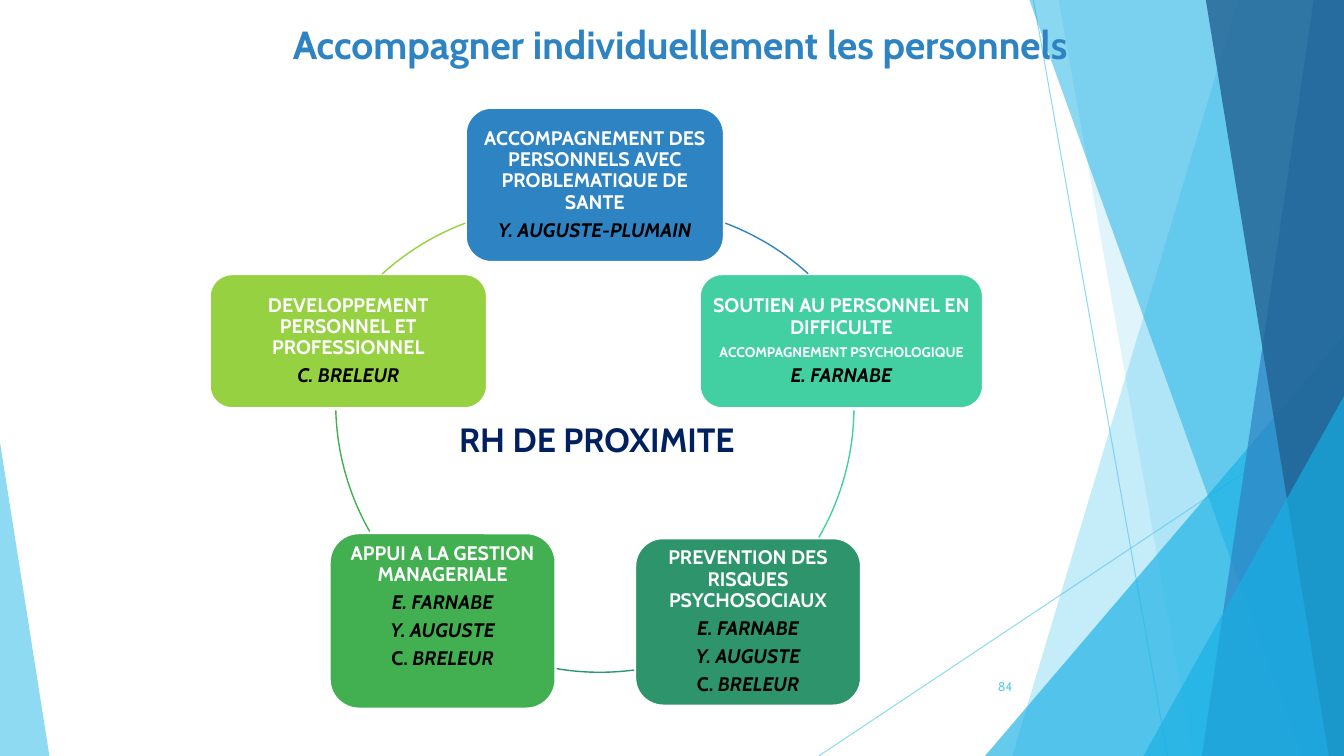
from dataclasses import dataclass

from lxml import etree
from pptx import Presentation
from pptx.dml.color import RGBColor
from pptx.enum.shapes import MSO_CONNECTOR, MSO_SHAPE
from pptx.enum.text import MSO_ANCHOR, PP_ALIGN
from pptx.oxml.ns import qn
from pptx.util import Emu, Pt

TRIANGLE = MSO_SHAPE.ISOSCELES_TRIANGLE
ROUNDED = MSO_SHAPE.ROUNDED_RECTANGLE
ARC = MSO_SHAPE.ARC
STRAIGHT = MSO_CONNECTOR.STRAIGHT
MIDDLE, TOP = MSO_ANCHOR.MIDDLE, MSO_ANCHOR.TOP
CENTER, RIGHT = PP_ALIGN.CENTER, PP_ALIGN.RIGHT

EMU_PER_PX = 9144  # 100 px to the inch
WIDTH, HEIGHT = 1333, 750
RING_SIZE = 514
CARD_INSET = 6


@dataclass(frozen=True)
class Theme:
    font: str = "Cabin"
    sky: str = "5FCBEF"
    cyan: str = "17B0E4"
    blue: str = "2E83C3"
    deep: str = "226292"
    navy: str = "002060"
    mint: str = "42D0A2"
    pine: str = "2E946B"
    green: str = "42B051"
    lime: str = "96D141"
    white: str = "FFFFFF"
    black: str = "000000"
    title: int = 28
    hub: int = 24
    body: int = 14
    note: int = 10
    number: int = 9


THEME = Theme()


@dataclass(frozen=True)
class Box:
    left: int
    top: int
    width: int
    height: int


@dataclass(frozen=True)
class Run:
    text: str
    size: int = THEME.body
    color: str = THEME.white
    bold: bool = True
    italic: bool = False


@dataclass(frozen=True)
class Ray:
    start: tuple[int, int]
    end: tuple[int, int]


@dataclass(frozen=True)
class Facet:
    points: tuple[tuple[int, int], ...]
    color: str
    opacity: int


@dataclass(frozen=True)
class Wedge:
    box: Box
    apex: float
    color: str
    opacity: int


@dataclass(frozen=True)
class Card:
    box: Box
    color: str
    paragraphs: tuple[tuple[Run, ...], ...]
    extra_bottom: int = 0


@dataclass(frozen=True)
class RingArc:
    left: int
    top: int
    start_degrees: float
    end_degrees: float
    color: str


def name(text: str) -> Run:
    return Run(text, color=THEME.black, italic=True)


TEAM = ((name("E. FARNABE"),), (name("Y. AUGUSTE"),),
        (Run("C. ", color=THEME.black), name("BRELEUR")))

RAYS = (Ray((1025, 0), (1158, HEIGHT)), Ray((WIDTH, 403), (812, HEIGHT)))


def facet(top_left: int, bottom_left: int, color: str, opacity: int) -> Facet:
    """Band from a slanted left edge to the right side of the slide."""
    return Facet(((top_left, 0), (WIDTH, 0), (WIDTH, HEIGHT), (bottom_left, HEIGHT)),
                 color, opacity)


BACKDROP = (
    facet(1228, 1004, THEME.sky, 36),
    facet(1050, 1183, THEME.sky, 20),
    Wedge(Box(977, 333, 356, 417), 1, THEME.cyan, 66),
    facet(1021, 1291, THEME.cyan, 50),
    facet(1303, 1192, THEME.blue, 70),
    facet(1196, 1318, THEME.deep, 80),
    Wedge(Box(1134, 393, 199, 357), 1, THEME.cyan, 66),
    Wedge(Box(0, 439, 49, 311), 0, THEME.sky, 70),
)

CARDS = (
    Card(Box(462, 107, 256, 153), THEME.blue, (
        (Run("ACCOMPAGNEMENT DES PERSONNELS AVEC PROBLEMATIQUE DE SANTE"),),
        (name("Y. AUGUSTE-PLUMAIN"),))),
    Card(Box(694, 272, 281, 133), THEME.mint, (
        (Run("SOUTIEN AU PERSONNEL EN DIFFICULTE"),),
        (Run("ACCOMPAGNEMENT PSYCHOLOGIQUE", THEME.note),),
        (name("E. FARNABE"),))),
    Card(Box(630, 534, 224, 166), THEME.pine, (
        (Run("PREVENTION DES RISQUES PSYCHOSOCIAUX"),), *TEAM)),
    Card(Box(327, 529, 224, 174), THEME.green, (
        (Run("APPUI A LA GESTION MANAGERIALE"),), *TEAM), extra_bottom=28),
    Card(Box(208, 272, 275, 133), THEME.lime, (
        (Run("DEVELOPPEMENT PERSONNEL ET PROFESSIONNEL"),),
        (name("C. BRELEUR"),))),
)

ARCS = (
    RingArc(372, 205, 290.6, 312.2, THEME.blue),
    RingArc(333, 147, 0.7, 30.2, THEME.mint),
    RingArc(338, 153, 82.4, 99.6, THEME.pine),
    RingArc(333, 143, 150.3, 178.4, THEME.green),
    RingArc(295, 205, 227.7, 249.4, THEME.lime),
)


def px(length: int) -> Emu:
    return Emu(length * EMU_PER_PX)


def place(box: Box) -> tuple[Emu, ...]:
    return px(box.left), px(box.top), px(box.width), px(box.height)


def set_opacity(shape, percent: int) -> None:
    for color in shape.element.iter(qn("a:srgbClr")):
        etree.SubElement(color, qn("a:alpha"), val=str(percent * 1000))


def paint(shape, color: str) -> None:
    shape.shadow.inherit = False
    shape.fill.solid()
    shape.fill.fore_color.rgb = RGBColor.from_string(color)
    shape.line.fill.background()


def outline(line, color: str, points: float) -> None:
    line.color.rgb = RGBColor.from_string(color)
    line.width = Pt(points)


def add_run(paragraph, item: Run) -> None:
    run = paragraph.add_run()
    run.text = item.text
    run.font.name = THEME.font
    run.font.size = Pt(item.size)
    run.font.bold = item.bold
    run.font.italic = item.italic
    run.font.color.rgb = RGBColor.from_string(item.color)


def add_ray(slide, ray: Ray) -> None:
    connector = slide.shapes.add_connector(
        STRAIGHT, *(px(value) for value in ray.start + ray.end))
    outline(connector.line, THEME.sky, 0.75)
    set_opacity(connector, 70)
    etree.SubElement(connector.element.spPr, qn("a:effectLst"))


def add_backdrop_piece(slide, piece: Facet | Wedge) -> None:
    if isinstance(piece, Facet):
        builder = slide.shapes.build_freeform(*piece.points[0], scale=EMU_PER_PX)
        builder.add_line_segments(piece.points[1:], close=True)
        shape = builder.convert_to_shape()
    else:
        shape = slide.shapes.add_shape(TRIANGLE, *place(piece.box))
        shape.adjustments[0] = piece.apex
    paint(shape, piece.color)
    set_opacity(shape, piece.opacity)


def add_card(slide, card: Card) -> None:
    shape = slide.shapes.add_shape(ROUNDED, *place(card.box))
    paint(shape, card.color)
    outline(shape.line, THEME.white, 1.5)
    frame = shape.text_frame
    frame.word_wrap = True
    frame.vertical_anchor = MIDDLE
    frame.margin_left = frame.margin_right = frame.margin_top = px(CARD_INSET)
    frame.margin_bottom = px(CARD_INSET + card.extra_bottom)
    for index, runs in enumerate(card.paragraphs):
        paragraph = frame.add_paragraph() if index else frame.paragraphs[0]
        paragraph.alignment = CENTER
        paragraph.line_spacing = 0.9
        paragraph.space_after = Pt(0.35 * runs[0].size)
        for item in runs:
            add_run(paragraph, item)


def add_ring_arc(slide, arc: RingArc) -> None:
    shape = slide.shapes.add_shape(ARC, *place(Box(arc.left, arc.top, RING_SIZE, RING_SIZE)))
    shape.shadow.inherit = False
    shape.fill.background()
    outline(shape.line, arc.color, 1)
    # Angles are stored in 60000ths of a degree, adjustments in 100000ths
    shape.adjustments[0] = arc.start_degrees * 0.6
    shape.adjustments[1] = arc.end_degrees * 0.6


def add_label(slide, box: Box, item: Run, alignment=CENTER, anchor=MIDDLE) -> None:
    frame = slide.shapes.add_textbox(*place(box)).text_frame
    frame.word_wrap = True
    frame.vertical_anchor = anchor
    frame.paragraphs[0].alignment = alignment
    add_run(frame.paragraphs[0], item)


def main() -> None:
    presentation = Presentation()
    presentation.slide_width, presentation.slide_height = px(WIDTH), px(HEIGHT)
    slide = presentation.slides.add_slide(presentation.slide_layouts[6])

    # Backdrop
    for ray in RAYS:
        add_ray(slide, ray)
    for piece in BACKDROP:
        add_backdrop_piece(slide, piece)

    # Title
    add_label(slide, Box(26, 6, 1297, 75),
              Run("Accompagner individuellement les personnels", THEME.title, THEME.blue))

    # Cycle of cards
    for card in CARDS:
        add_card(slide, card)
    for arc in ARCS:
        add_ring_arc(slide, arc)

    # Centre label and slide number
    add_label(slide, Box(442, 411, 300, 50),
              Run("RH DE PROXIMITE", THEME.hub, THEME.navy), anchor=TOP)
    add_label(slide, Box(939, 661, 75, 40),
              Run("84", THEME.number, THEME.sky, bold=False), RIGHT)

    presentation.save("out.pptx")


if __name__ == "__main__":
    main()
